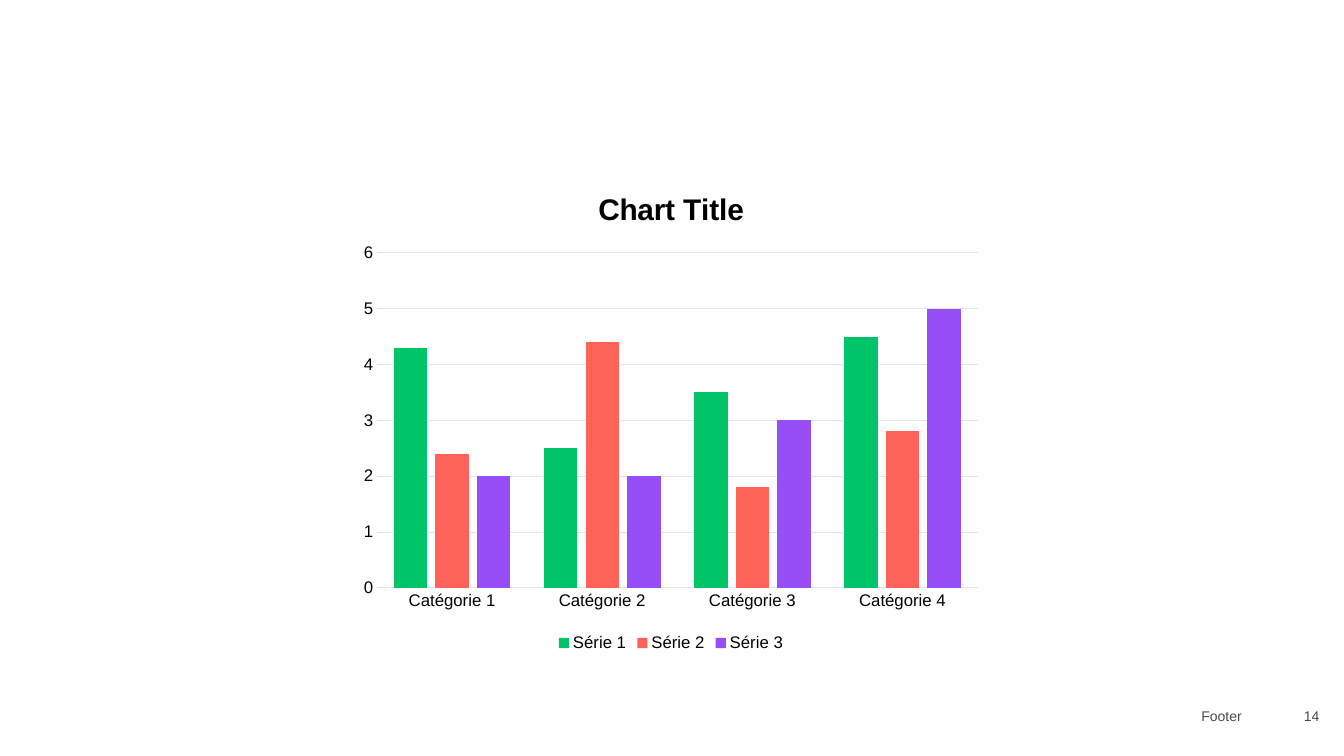
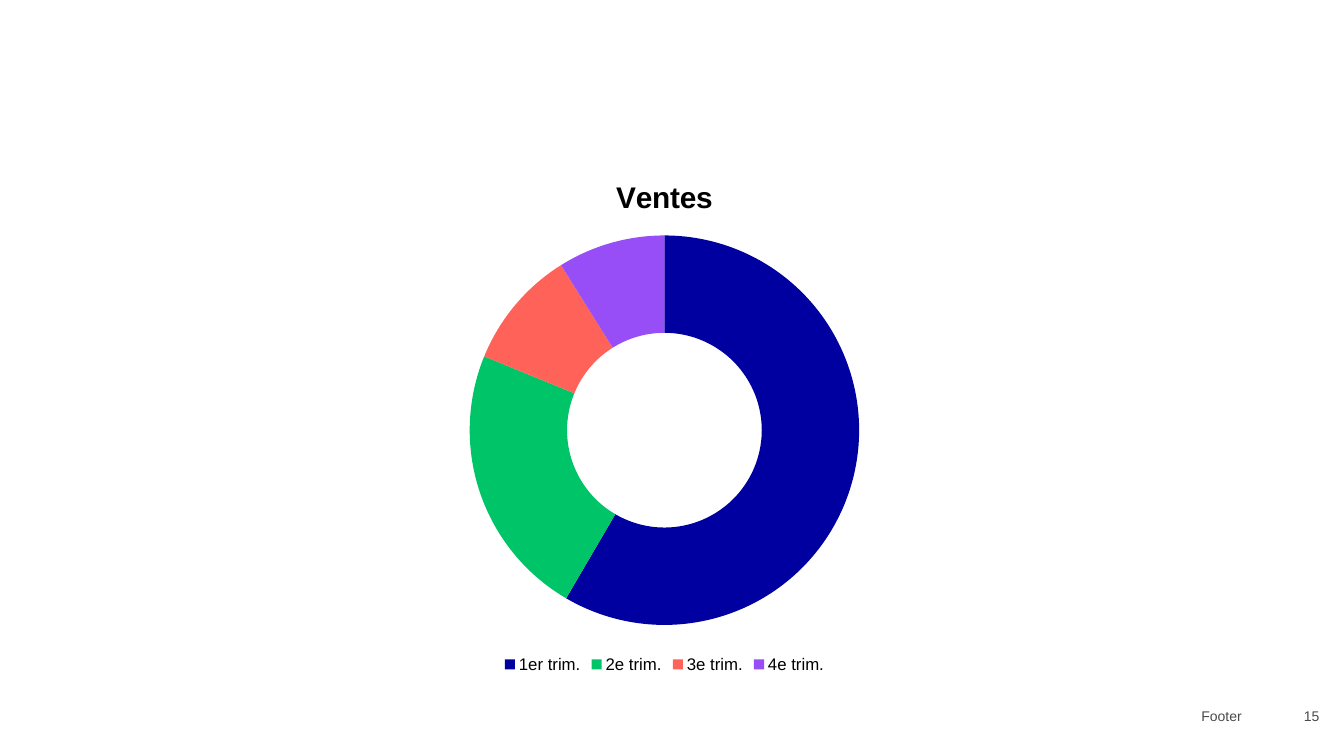
from lxml import etree
from pptx import Presentation
from pptx import util as u
from pptx.chart.data import CategoryChartData
from pptx.dml.color import RGBColor
from pptx.enum import chart as ch, text as tx
from pptx.oxml.ns import qn

BLACK = RGBColor(0x00, 0x00, 0x00)
WHITE = RGBColor(0xFF, 0xFF, 0xFF)
GREY = RGBColor(0x4A, 0x4A, 0x49)
RULE = RGBColor(0xE4, 0xE4, 0xE4)
NAVY = RGBColor(0x00, 0x00, 0xA0)
GREEN = RGBColor(0x00, 0xC5, 0x68)
CORAL = RGBColor(0xFF, 0x62, 0x59)
VIOLET = RGBColor(0x98, 0x4E, 0xF6)
FONT = "Arial"


def write(frame, words, size=10, color=GREY, bold=False, align=tx.PP_ALIGN.RIGHT):
    paragraph = frame.paragraphs[0]
    paragraph.alignment = align
    run = paragraph.add_run()
    run.text = words
    run.font.name = FONT
    run.font.size = u.Pt(size)
    run.font.bold = bold
    run.font.color.rgb = color


def style(font, size=12, color=BLACK):
    font.name = FONT
    font.size = u.Pt(size)
    font.color.rgb = color


deck = Presentation()
deck.slide_width = u.Cm(33.87)
deck.slide_height = u.Cm(19.05)

pages = [
    dict(number="14", title="Chart Title", kind=ch.XL_CHART_TYPE.COLUMN_CLUSTERED,
         place=(8.86, 4.29, 16.1, 12.24), plot_area=(0.04, 0.17, 0.94, 0.69),
         categories=["Catégorie 1", "Catégorie 2", "Catégorie 3", "Catégorie 4"],
         series={"Série 1": (4.3, 2.5, 3.5, 4.5),
                 "Série 2": (2.4, 4.4, 1.8, 2.8),
                 "Série 3": (2, 2, 3, 5)},
         colors=[GREEN, CORAL, VIOLET]),
    dict(number="15", title="Ventes", kind=ch.XL_CHART_TYPE.DOUGHNUT,
         place=(6.93, 3.96, 19.63, 13.11), plot_area=(0.25, 0.15, 0.5, 0.75),
         categories=["1er trim.", "2e trim.", "3e trim.", "4e trim."],
         series={"Ventes": (59, 23, 10, 9)},
         colors=[NAVY, GREEN, CORAL, VIOLET]),
]

for page in pages:
    slide = deck.slides.add_slide(deck.slide_layouts[6])
    slide.background.fill.solid()
    slide.background.fill.fore_color.rgb = WHITE

    for words, left, width in (("Footer", 16.94, 14.6), (page["number"], 32.13, 1.37)):
        footer = slide.shapes.add_textbox(u.Cm(left), u.Cm(17.55), u.Cm(width), u.Cm(1))
        footer.text_frame.word_wrap = True
        footer.text_frame.vertical_anchor = tx.MSO_ANCHOR.MIDDLE
        write(footer.text_frame, words)

    figures = CategoryChartData()
    figures.categories = page["categories"]
    for name, values in page["series"].items():
        figures.add_series(name, values)
    place = [u.Cm(length) for length in page["place"]]
    chart = slide.shapes.add_chart(page["kind"], *place, figures).chart
    style(chart.font, size=10, color=GREY)

    chart.has_title = True
    write(chart.chart_title.text_frame, page["title"], size=21.3, color=BLACK,
          bold=True, align=tx.PP_ALIGN.CENTER)
    chart.chart_title.include_in_layout = False
    chart.has_legend = True
    chart.legend.position = ch.XL_LEGEND_POSITION.BOTTOM
    chart.legend.include_in_layout = False
    style(chart.legend.font)

    plot_area = chart.element.find(".//" + qn("c:plotArea"))
    for automatic in plot_area.findall(qn("c:layout")):
        plot_area.remove(automatic)
    layout = etree.Element(qn("c:layout"))
    manual = etree.SubElement(layout, qn("c:manualLayout"))
    settings = [("layoutTarget", "inner"), ("xMode", "edge"), ("yMode", "edge")]
    settings += zip("xywh", page["plot_area"])
    for key, value in settings:
        etree.SubElement(manual, qn("c:" + key)).set("val", str(value))
    plot_area.insert(0, layout)

    plot = chart.plots[0]
    if page["kind"] == ch.XL_CHART_TYPE.DOUGHNUT:
        plot.vary_by_categories = True
        plot_area.find(".//" + qn("c:holeSize")).set("val", "75")
        ring = plot.series[0]
        parts = [ring.points[i] for i in range(len(page["categories"]))]
    else:
        plot.vary_by_categories = False
        plot.gap_width = 100
        plot.overlap = -24
        parts = plot.series
        for axis in (chart.category_axis, chart.value_axis):
            axis.major_tick_mark = ch.XL_TICK_MARK.NONE
            axis.minor_tick_mark = ch.XL_TICK_MARK.NONE
            style(axis.tick_labels.font)
        chart.value_axis.minimum_scale = 0
        chart.value_axis.maximum_scale = 6
        chart.value_axis.major_unit = 1
        chart.value_axis.format.line.fill.background()
        chart.value_axis.has_major_gridlines = True
        for line in (chart.category_axis.format.line,
                     chart.value_axis.major_gridlines.format.line):
            line.color.rgb = RULE
            line.width = u.Pt(0.75)

    for part, color in zip(parts, page["colors"]):
        part.format.fill.solid()
        part.format.fill.fore_color.rgb = color
        part.format.line.fill.background()

deck.save("out.pptx")
